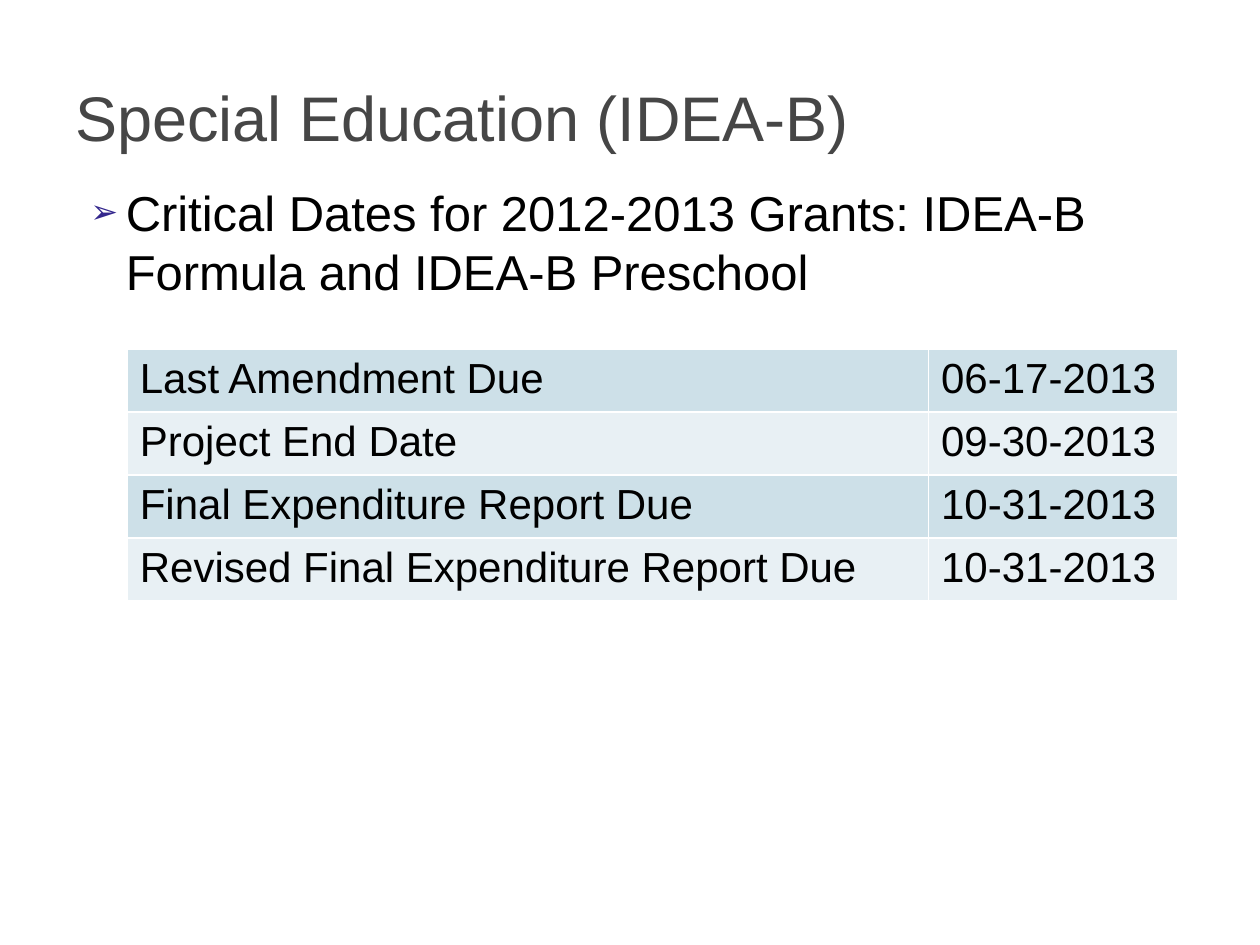
from lxml import etree
from pptx import Presentation
from pptx.dml.color import RGBColor
from pptx.enum.text import MSO_ANCHOR
from pptx.oxml.ns import qn
from pptx.util import Inches, Pt

MIDDLE = MSO_ANCHOR.MIDDLE
TOP = MSO_ANCHOR.TOP

FONT = "Arial"
BLACK = RGBColor(0x00, 0x00, 0x00)
GREY = RGBColor(0x46, 0x46, 0x46)
WHITE = RGBColor(0xFF, 0xFF, 0xFF)
PURPLE = RGBColor(0x34, 0x27, 0x8D)
BAND_COLORS = (RGBColor(0xCD, 0xE0, 0xE8), RGBColor(0xE8, 0xF0, 0xF4))

COLUMN_WIDTHS = (6.36, 1.98)
ROW_HEIGHT = 0.41
CRITICAL_DATES = (
    ("Last Amendment Due", "06-17-2013"),
    ("Project End Date", "09-30-2013"),
    ("Final Expenditure Report Due", "10-31-2013"),
    ("Revised Final Expenditure Report Due", "10-31-2013"),
)


def write_text(frame, text, size, color=BLACK, bullet=None):
    para = frame.paragraphs[0]
    if bullet:
        add_bullet(para, bullet)
    span = para.add_run()
    span.text = text
    span.font.name = FONT
    span.font.size = Pt(size)
    span.font.color.rgb = color


def add_bullet(para, character):
    """Give the paragraph a hanging, coloured bullet at 68% of the text size."""
    properties = para._p.get_or_add_pPr()
    properties.set("marL", str(Inches(0.4)))
    properties.set("indent", str(Inches(-0.28)))
    color = etree.SubElement(properties, qn("a:buClr"))
    etree.SubElement(color, qn("a:srgbClr"), val=str(PURPLE))
    etree.SubElement(properties, qn("a:buSzPct"), val="68000")
    etree.SubElement(properties, qn("a:buFont"), typeface=FONT)
    etree.SubElement(properties, qn("a:buChar"), char=character)


def add_text_box(page, left, top, width, height, text, anchor=TOP, **text_format):
    box = page.shapes.add_textbox(
        Inches(left), Inches(top), Inches(width), Inches(height))
    box.text_frame.word_wrap = True
    box.text_frame.vertical_anchor = anchor
    write_text(box.text_frame, text, **text_format)


def add_cell_borders(cell):
    properties = cell._tc.get_or_add_tcPr()
    for side in ("lnL", "lnR", "lnT", "lnB"):
        line = etree.SubElement(properties, qn(f"a:{side}"), w=str(Pt(1)))
        fill = etree.SubElement(line, qn("a:solidFill"))
        etree.SubElement(fill, qn("a:srgbClr"), val=str(WHITE))


def add_dates_table(page, left, top):
    table = page.shapes.add_table(
        len(CRITICAL_DATES), len(COLUMN_WIDTHS), Inches(left), Inches(top),
        Inches(sum(COLUMN_WIDTHS)), Inches(ROW_HEIGHT * len(CRITICAL_DATES))).table
    table.first_row = False
    for column, width in zip(table.columns, COLUMN_WIDTHS):
        column.width = Inches(width)
    for row_index, entries in enumerate(CRITICAL_DATES):
        for column_index, text in enumerate(entries):
            cell = table.cell(row_index, column_index)
            add_cell_borders(cell)
            cell.fill.solid()
            cell.fill.fore_color.rgb = BAND_COLORS[row_index % 2]
            write_text(cell.text_frame, text, size=24)


def main():
    deck = Presentation()
    deck.slide_width, deck.slide_height = Inches(10), Inches(7.5)
    page = deck.slides.add_slide(deck.slide_layouts[6])
    add_text_box(page, 0.5, 1.4, 9, 5.16,
                 "Critical Dates for 2012-2013 Grants: IDEA-B Formula and IDEA-B Preschool",
                 size=28, bullet="➢")
    add_text_box(page, 0.5, 0.3, 9, 1.25, "Special Education (IDEA-B)",
                 anchor=MIDDLE, size=36, color=GREY)
    add_dates_table(page, 1.01, 2.77)
    deck.save("out.pptx")


if __name__ == "__main__":
    main()
